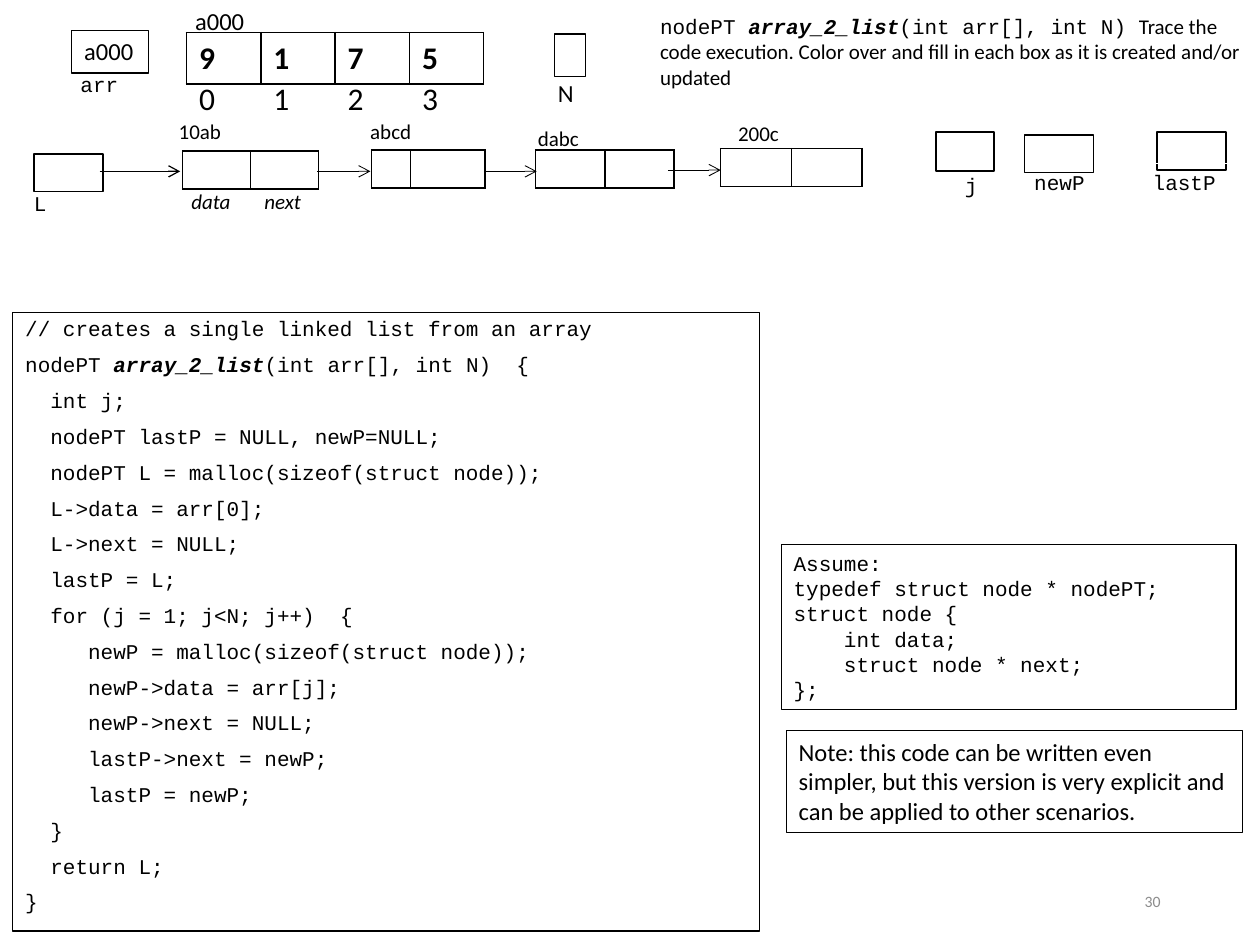
from lxml.etree import SubElement
from pptx import Presentation
from pptx.dml.color import RGBColor
from pptx.enum.shapes import MSO_CONNECTOR, MSO_SHAPE
from pptx.enum.text import MSO_ANCHOR, MSO_AUTO_SIZE, PP_ALIGN
from pptx.oxml.ns import qn
from pptx.util import Inches, Pt

BLACK = RGBColor(0, 0, 0)
WHITE = RGBColor(255, 255, 255)
GRAY = RGBColor(0x8C, 0x8C, 0x8C)
SANS = "Calibri"
MONO = "Courier New"

HEAD = [("nodePT ", False), ("array_2_list", True)]
CODE = [
    [("// creates a single linked list from an array", False)],
    HEAD + [("(int arr[], int N)  {", False)],
] + [[(line, False)] for line in (
    "  int j;",
    "  nodePT lastP = NULL, newP=NULL;",
    "  nodePT L = malloc(sizeof(struct node));",
    "  L->data = arr[0];",
    "  L->next = NULL;",
    "  lastP = L;",
    "  for (j = 1; j<N; j++) \t{",
    "     newP = malloc(sizeof(struct node));",
    "     newP->data = arr[j];",
    "     newP->next = NULL;",
    "     lastP->next = newP;",
    "     lastP = newP;",
    "  }",
    "  return L;",
    "}",
)]
TYPES = [
    "Assume:",
    "typedef struct node * nodePT;",
    "struct node {",
    "    int data;",
    "    struct node * next;",
    "};",
]
NOTE = ("Note: this code can be written even simpler, but this version is "
        "very explicit and can be applied to other scenarios.")
TASK = ("Trace the code execution. Color over and fill in each box as it is "
        "created and/or updated")


def add_run(para, text, size=12, font=SANS, color=BLACK, bold=False, slant=False):
    run = para.add_run()
    run.text = text
    face = run.font
    face.size, face.name = Pt(size), font
    face.bold, face.italic = bold, slant
    face.color.rgb = color


def add_text(slide, spot, lines, edge=None, wrap=True, **style):
    box = slide.shapes.add_textbox(*map(Inches, spot))
    frame = box.text_frame
    frame.word_wrap = wrap
    if edge is not None:
        box.line.color.rgb = edge
        box.line.width = Pt(0.75)
    for num, line in enumerate(lines):
        para = frame.add_paragraph() if num else frame.paragraphs[0]
        add_run(para, line, **style)
    return box


def add_box(slide, spot, fill=None, width=1):
    box = slide.shapes.add_shape(MSO_SHAPE.RECTANGLE, *map(Inches, spot))
    box.shadow.inherit = False
    if fill is None:
        box.fill.background()
    else:
        box.fill.solid()
        box.fill.fore_color.rgb = fill
    box.line.color.rgb = BLACK
    box.line.width = Pt(width)


def add_arrow(slide, left, right, y, width=0.5):
    line = slide.shapes.add_connector(
        MSO_CONNECTOR.STRAIGHT, *map(Inches, (left, y, right, y)))
    line.line.color.rgb = BLACK
    line.line.width = Pt(width)
    props = line._element.spPr
    SubElement(props.find(qn("a:ln")), qn("a:tailEnd"), type="arrow")
    SubElement(props, qn("a:effectLst"))


def set_edges(cell, drawn):
    props = cell._tc.get_or_add_tcPr()
    for num, side in enumerate(("lnL", "lnR", "lnT", "lnB")):
        edge = SubElement(props, qn("a:" + side), w=str(Pt(1)))
        if drawn:
            fill = SubElement(edge, qn("a:solidFill"))
            SubElement(fill, qn("a:srgbClr"), val=str(BLACK))
        else:
            SubElement(edge, qn("a:noFill"))
        props.remove(edge)
        props.insert(num, edge)


def add_cells(slide, left, top, cols, high=0.3, words=None, drawn=True, bold=False):
    frame = slide.shapes.add_table(
        1, len(cols), *map(Inches, (left, top, sum(cols), high)))
    grid = frame.table
    grid.first_row = grid.horz_banding = False
    for num, wide in enumerate(cols):
        grid.columns[num].width = Inches(wide)
        cell = grid.cell(0, num)
        cell.fill.background()
        set_edges(cell, drawn)
        para = cell.text_frame.paragraphs[0]
        if words:
            add_run(para, words[num], 18, bold=bold)
        else:
            SubElement(para._p, qn("a:endParaRPr"), sz="1200")


def add_code(slide):
    body = slide.placeholders[1]
    body.left, body.top = Inches(0.1), Inches(2.48)
    body.width, body.height = Inches(5.93), Inches(4.91)
    body.line.color.rgb = BLACK
    body.line.width = Pt(0.75)
    frame = body.text_frame
    frame.auto_size = MSO_AUTO_SIZE.NONE
    for num, line in enumerate(CODE):
        para = frame.add_paragraph() if num else frame.paragraphs[0]
        para.line_spacing, para.space_before = 0.9, Pt(7.5)
        props = para._p.get_or_add_pPr()
        props.set("marL", "0")
        props.set("indent", "0")
        SubElement(props, qn("a:buNone"))
        tabs = SubElement(props, qn("a:tabLst"))
        SubElement(tabs, qn("a:tab"), pos=str(Inches(3)), algn="l")
        for text, bold in line:
            add_run(para, text, font=MONO, bold=bold, slant=bold)


def add_array(slide):
    cols = [0.59] * 4
    add_cells(slide, 1.48, 0.26, cols, 0.33, "9175", bold=True)
    add_cells(slide, 1.48, 0.59, cols, 0.33, "0123", drawn=False)
    add_text(slide, (0.54, 0.52, 0.51, 0.3), ["arr"], WHITE, font=MONO)
    add_text(slide, (4.33, 0.57, 0.33, 0.34), ["N"], wrap=False, size=14)
    add_box(slide, (4.4, 0.27, 0.25, 0.34), width=0.75)
    add_text(slide, (0.57, 0.24, 0.61, 0.34), ["a000"], BLACK, size=14)
    add_text(slide, (1.45, 0, 0.61, 0.34), ["a000"], size=14)


def add_list(slide):
    for left, top, cols in (
        (2.95, 1.19, (0.31, 0.59)),
        (5.72, 1.18, (0.56, 0.56)),
        (4.25, 1.19, (0.55, 0.55)),
        (1.45, 1.2, (0.54, 0.54)),
    ):
        add_cells(slide, left, top, cols)
    for left, y in ((2.52, 1.36), (3.84, 1.36), (5.3, 1.35)):
        add_arrow(slide, left, left + 0.42, y)
    for left, top, text in (
        (1.32, 0.89, "10ab"), (2.84, 0.89, "abcd"),
        (4.17, 0.95, "dabc"), (5.76, 0.91, "200c"),
    ):
        add_text(slide, (left, top, 0.54, 0.3), [text], wrap=False)
    for left, text in ((1.42, "data"), (2, "next")):
        add_text(slide, (left, 1.45, 0.58, 0.3), [text], slant=True)


def add_vars(slide):
    for text, label, box in (
        ("L", (0.17, 1.46, 0.33, 0.3), (0.27, 1.22, 0.55, 0.3)),
        ("newP", (8.11, 1.3, 0.61, 0.3), (8.13, 1.07, 0.55, 0.3)),
        ("j", (7.56, 1.32, 0.33, 0.3), (7.43, 1.05, 0.46, 0.31)),
    ):
        add_text(slide, label, [text], WHITE, font=MONO)
        add_box(slide, box, WHITE)
    add_box(slide, (9.18, 1.05, 0.55, 0.3), WHITE)
    add_text(slide, (9.05, 1.3, 0.72, 0.3), ["lastP"], WHITE, font=MONO)
    add_arrow(slide, 0.79, 1.43, 1.36, 0.75)


def add_notes(slide):
    task = add_text(slide, (5.14, 0.06, 4.85, 0.71), [])
    para = task.text_frame.paragraphs[0]
    for text, bold in HEAD + [("(int arr[], int N) ", False)]:
        add_run(para, text, font=MONO, bold=bold, slant=bold)
    add_run(para, TASK)
    add_text(slide, (6.2, 4.32, 3.61, 1.31), TYPES, BLACK, font=MONO)
    add_text(slide, (6.24, 5.8, 3.62, 0.81), [NOTE], BLACK, size=14)
    page = add_text(slide, (7.06, 6.95, 2.25, 0.4), ["30"], size=9, color=GRAY)
    page.text_frame.vertical_anchor = MSO_ANCHOR.MIDDLE
    page.text_frame.paragraphs[0].alignment = PP_ALIGN.RIGHT


def main():
    deck = Presentation()
    deck.slide_width, deck.slide_height = Inches(10), Inches(7.5)
    slide = deck.slides.add_slide(deck.slide_layouts[1])
    title = slide.shapes.title._element
    title.getparent().remove(title)
    add_code(slide)
    add_array(slide)
    add_list(slide)
    add_vars(slide)
    add_notes(slide)
    deck.save("out.pptx")


if __name__ == "__main__":
    main()
